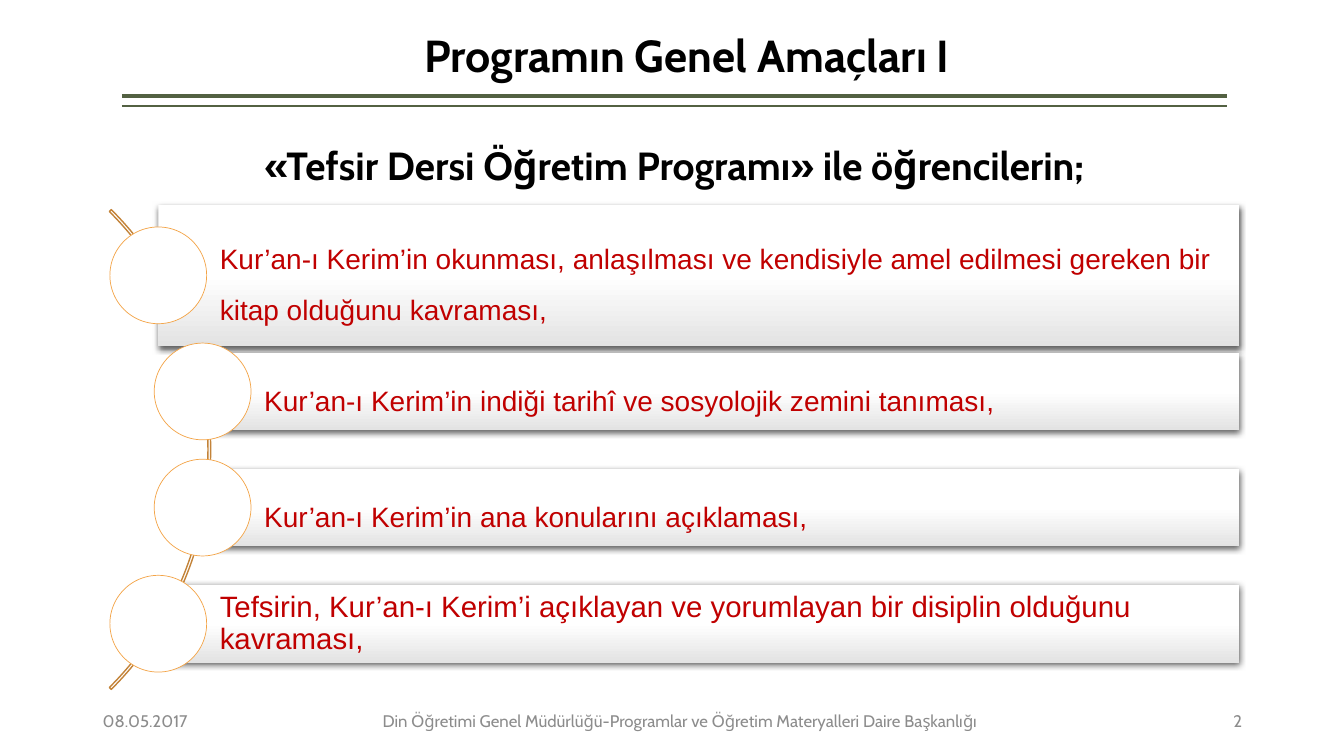
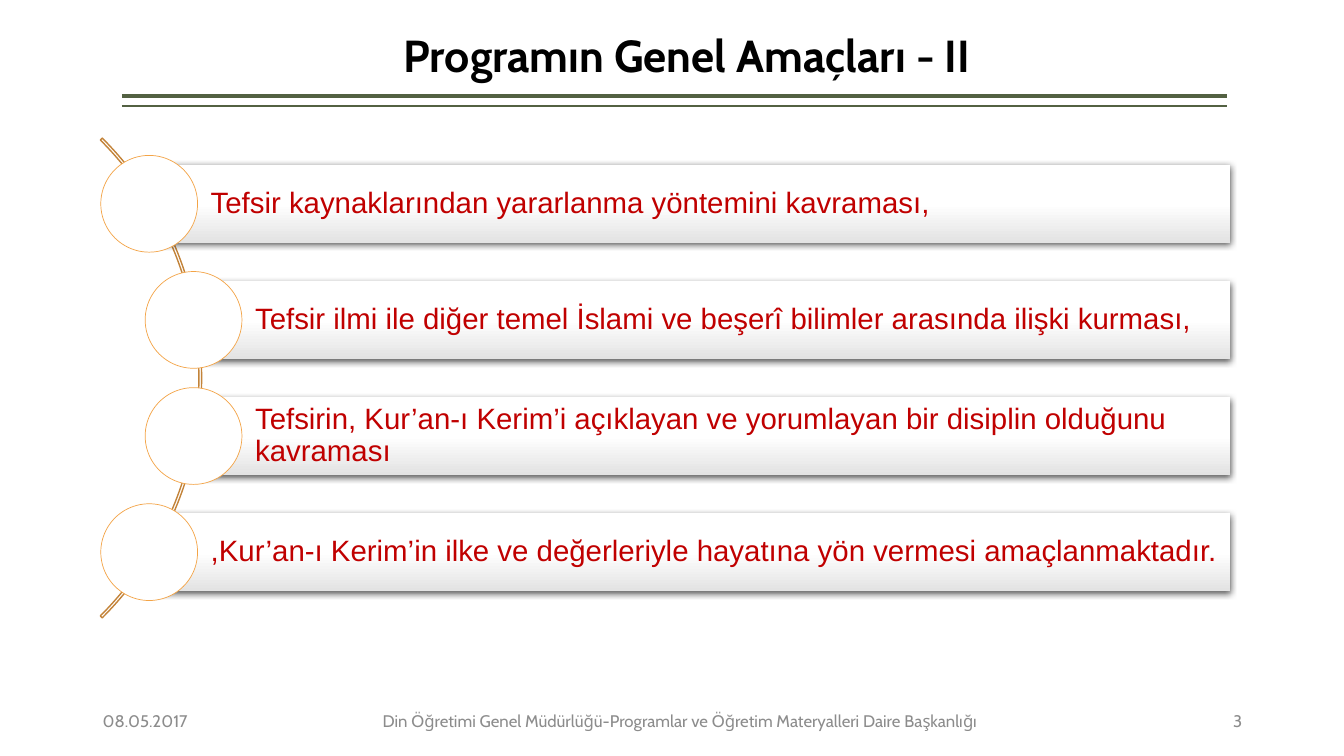
from lxml.etree import SubElement
from pptx import Presentation
from pptx.dml.color import RGBColor
from pptx.enum.shapes import MSO_CONNECTOR, MSO_SHAPE
from pptx.enum.text import MSO_ANCHOR, PP_ALIGN
from pptx.oxml.ns import qn
from pptx.util import Inches, Pt

COLORS = {
    "title": "000000",
    "rule": "536142",
    "foot": "8C8C8C",
    "goal": "C00000",
    "arc": "C38339",
    "ring": "F3A447",
    "white": "FFFFFF",
    "shade": "E3E3E3",
}
HEAD, BODY = "Cabin", "Arial"
DATE = "08.05.2017"
OFFICE = "Din Öğretimi Genel Müdürlüğü-Programlar ve Öğretim Materyalleri Daire Başkanlığı"
RULES = [(0.95, 3), (1.05, 1)]

LOOSE = {"size": 20, "space": 1.5}
TIGHT = {"size": 21, "space": 0.9}
SLIDES = [
    {
        "title": "Programın Genel Amaçları I",
        "lead": "«Tefsir Dersi Öğretim Programı» ile öğrencilerin;",
        "page": 2,
        "left": 1.09,
        "mid": 4.46,
        "goals": [
            ("Kur’an-ı Kerim’in okunması, anlaşılması ve kendisiyle amel edilmesi gereken bir kitap olduğunu kavraması,", 1.4, LOOSE),
            ("Kur’an-ı Kerim’in indiği tarihî ve sosyolojik zemini tanıması,", 0.77, LOOSE),
            ("Kur’an-ı Kerim’in ana konularını açıklaması,", 0.77, LOOSE),
            ("Tefsirin, Kur’an-ı Kerim’i açıklayan ve yorumlayan bir disiplin olduğunu kavraması,", 0.77, TIGHT),
        ],
    },
    {
        "title": "Programın Genel Amaçları - II",
        "lead": None,
        "page": 3,
        "left": 1,
        "mid": 3.75,
        "goals": [
            ("Tefsir kaynaklarından yararlanma yöntemini kavraması,", 0.77, TIGHT),
            ("Tefsir ilmi ile diğer temel İslami ve beşerî bilimler arasında ilişki kurması,", 0.77, TIGHT),
            ("Tefsirin, Kur’an-ı Kerim’i açıklayan ve yorumlayan bir disiplin olduğunu kavraması", 0.77, TIGHT),
            (",Kur’an-ı Kerim’in ilke ve değerleriyle hayatına yön vermesi amaçlanmaktadır.", 0.77, TIGHT),
        ],
    },
]

BALL = 0.96
PITCH = 1.2 * BALL
SHIFT = 0.44
WIDTH = 11.2
ARC = 6.73
ARC_LEFT = -5.73


def color(name):
    return RGBColor.from_string(COLORS[name])


def write(shape, text, size, tint, font=HEAD, align=PP_ALIGN.LEFT, space=1.0,
          bold=False, anchor=MSO_ANCHOR.MIDDLE):
    frame = shape.text_frame
    frame.text = text
    frame.word_wrap = True
    frame.vertical_anchor = anchor
    para = frame.paragraphs[0]
    para.alignment = align
    para.line_spacing = space
    face = para.runs[0].font
    face.name, face.size, face.bold = font, Pt(size), bold
    face.color.rgb = color(tint)


def add_text(slide, area, *args, **style):
    write(slide.shapes.add_textbox(*map(Inches, area)), *args, **style)


def add_shape(slide, kind, area, fill=None, line=None, width=1):
    shape = slide.shapes.add_shape(kind, *map(Inches, area))
    shape.shadow.inherit = False
    if fill:
        shape.fill.solid()
        shape.fill.fore_color.rgb = color(fill)
    else:
        shape.fill.background()
    if line:
        shape.line.color.rgb = color(line)
        shape.line.width = Pt(width)
    else:
        shape.line.fill.background()
    return shape


def add_frame(slide, title, page):
    for top, width in RULES:
        rule = slide.shapes.add_connector(
            MSO_CONNECTOR.STRAIGHT, Inches(1.21), Inches(top), Inches(12.17), Inches(top))
        rule.line.color.rgb = color("rule")
        rule.line.width = Pt(width)
        SubElement(rule._element.spPr, qn("a:effectLst"))
    add_text(slide, (1.21, 0.16, 11.21, 0.84), title, 32, "title",
             align=PP_ALIGN.CENTER, space=0.9, bold=True)
    for left, width, text, align in [
        (0.92, 1.25, DATE, PP_ALIGN.LEFT),
        (2.5, 8.49, OFFICE, PP_ALIGN.CENTER),
        (11.26, 1.16, str(page), PP_ALIGN.RIGHT),
    ]:
        add_text(slide, (left, 6.95, width, 0.4), text, 12, "foot", align=align)


def add_bar(slide, area, text, size, space):
    bar = add_shape(slide, MSO_SHAPE.RECTANGLE, area)
    bar.fill.gradient()
    bar.fill.gradient_angle = 270
    for stop, place, tint in zip(bar.fill.gradient_stops, (0.5, 1), ("white", "shade")):
        stop.position = place
        stop.color.rgb = color(tint)
    glow = SubElement(bar._element.spPr.find(qn("a:effectLst")), qn("a:outerShdw"),
                      blurRad=str(Pt(4.5)), dist=str(Pt(1.5)), dir="5400000", rotWithShape="0")
    shade = SubElement(glow, qn("a:srgbClr"), val="000000")
    SubElement(shade, qn("a:alpha"), val="63000")
    write(bar, text, size, "goal", font=BODY, space=space)
    frame = bar.text_frame
    frame.margin_left = Inches(0.61)
    frame.margin_right = frame.margin_top = frame.margin_bottom = Inches(0.06)


def add_goals(slide, goals, left, mid):
    arc = add_shape(slide, MSO_SHAPE.BLOCK_ARC,
                    (left + ARC_LEFT, mid - ARC / 2, ARC, ARC), line="arc")
    for index, value in enumerate((189, 27, 0.004)):
        arc.adjustments[index] = value
    last = len(goals) - 1
    for row, (text, height, style) in enumerate(goals):
        center = mid + (row - last / 2) * PITCH
        start = left + (SHIFT if 0 < row < last else 0)
        edge = start + BALL / 2
        add_bar(slide, (edge, center - height / 2, left + WIDTH - edge, height), text, **style)
        add_shape(slide, MSO_SHAPE.OVAL, (start, center - BALL / 2, BALL, BALL),
                  "white", "ring", 0.5)


def main():
    deck = Presentation()
    deck.slide_width, deck.slide_height = Inches(13.33), Inches(7.5)
    for data in SLIDES:
        slide = deck.slides.add_slide(deck.slide_layouts[6])
        add_frame(slide, data["title"], data["page"])
        if data["lead"]:
            add_text(slide, (0.51, 1.12, 12.36, 0.8), data["lead"], 28, "title",
                     align=PP_ALIGN.CENTER, space=1.5, bold=True, anchor=MSO_ANCHOR.TOP)
        add_goals(slide, data["goals"], data["left"], data["mid"])
    deck.save("out.pptx")


if __name__ == "__main__":
    main()
